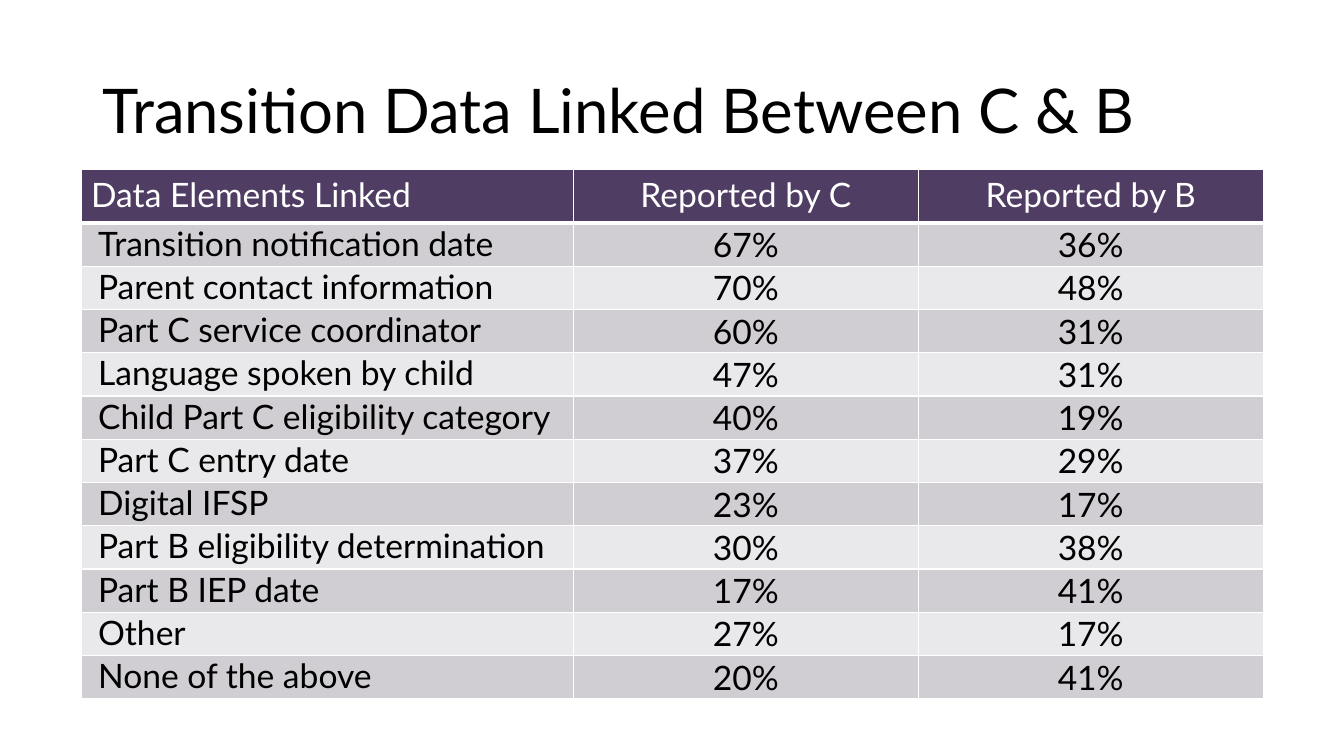
from dataclasses import dataclass

from lxml.etree import SubElement
from pptx import Presentation
from pptx.dml.color import RGBColor
from pptx.enum.text import MSO_ANCHOR as Anchor, PP_ALIGN as Align
from pptx.oxml.ns import qn
from pptx.util import Pt


@dataclass(frozen=True)
class Theme:
    font: str = "Lato"
    title_size: float = 44
    table_size: float = 24
    black: str = "000000"
    white: str = "FFFFFF"
    header: str = "4F3D63"
    bands: tuple = ("D0CED3", "E9E8EA")


THEME = Theme()
TITLE = "Transition Data Linked Between C & B"
HEADINGS = ("Data Elements Linked", "Reported by C", "Reported by B")
LINKED_DATA = (
    ("Transition notification date", "67%", "36%"),
    ("Parent contact information", "70%", "48%"),
    ("Part C service coordinator", "60%", "31%"),
    ("Language spoken by child", "47%", "31%"),
    ("Child Part C eligibility category", "40%", "19%"),
    ("Part C entry date", "37%", "29%"),
    ("Digital IFSP", "23%", "17%"),
    ("Part B eligibility determination", "30%", "38%"),
    ("Part B IEP date", "17%", "41%"),
    ("Other", "27%", "17%"),
    ("None of the above", "20%", "41%"),
)
COLUMN_WIDTHS = (351.6, 246.4, 246.4)
HEADER_HEIGHT, ROW_HEIGHT = 38.1, 30.9


def style_paragraph(paragraph, size, color, align):
    paragraph.alignment = align
    font = paragraph.font
    font.name, font.size, font.bold = THEME.font, Pt(size), False
    font.color.rgb = RGBColor.from_string(color)


def add_title(slide):
    title = slide.shapes.title
    title.left, title.top = Pt(66), Pt(28.75)
    title.width, title.height = Pt(828), Pt(104.4)
    frame = title.text_frame
    frame.text = TITLE
    frame.word_wrap = True
    frame.vertical_anchor = Anchor.MIDDLE
    paragraph = frame.paragraphs[0]
    paragraph.line_spacing = 0.9
    style_paragraph(paragraph, THEME.title_size, THEME.black, Align.LEFT)


def set_borders(cell, bottom_width):
    properties = cell._tc.get_or_add_tcPr()
    for side, width in (("L", 1), ("R", 1), ("T", 1), ("B", bottom_width)):
        line = SubElement(properties, qn(f"a:ln{side}"), w=str(Pt(width)))
        fill = SubElement(line, qn("a:solidFill"))
        SubElement(fill, qn("a:srgbClr"), val=THEME.white)


def fill_cell(cell, text, fill, color, align, bottom_width=1):
    cell.text = text
    set_borders(cell, bottom_width)
    cell.fill.solid()
    cell.fill.fore_color.rgb = RGBColor.from_string(fill)
    style_paragraph(cell.text_frame.paragraphs[0], THEME.table_size, color, align)


def fill_body_cell(cell, text, fill, is_label):
    align = Align.LEFT if is_label else Align.CENTER
    fill_cell(cell, text, fill, THEME.black, align)
    cell.margin_left = cell.margin_right = Pt(5)
    cell.margin_top = cell.margin_bottom = 0
    if is_label:
        properties = cell.text_frame.paragraphs[0]._p.get_or_add_pPr()
        properties.set("marL", str(Pt(7.2)))
    else:
        cell.vertical_anchor = Anchor.MIDDLE


def add_data_table(slide):
    height = HEADER_HEIGHT + ROW_HEIGHT * len(LINKED_DATA)
    table = slide.shapes.add_table(
        len(LINKED_DATA) + 1, len(HEADINGS),
        Pt(57.9), Pt(121.2), Pt(sum(COLUMN_WIDTHS)), Pt(height)).table
    for column, width in zip(table.columns, COLUMN_WIDTHS):
        column.width = Pt(width)
    for index, row in enumerate(table.rows):
        row.height = Pt(ROW_HEIGHT if index else HEADER_HEIGHT)

    # Header row
    for column, heading in enumerate(HEADINGS):
        align = Align.CENTER if column else Align.LEFT
        fill_cell(table.cell(0, column), heading, THEME.header, THEME.white, align, 3)

    # Banded data rows
    for index, values in enumerate(LINKED_DATA):
        band = THEME.bands[index % 2]
        for column, value in enumerate(values):
            fill_body_cell(table.cell(index + 1, column), value, band, column == 0)


def main():
    presentation = Presentation()
    presentation.slide_width, presentation.slide_height = Pt(960), Pt(540)
    slide = presentation.slides.add_slide(presentation.slide_layouts[5])
    add_title(slide)
    add_data_table(slide)
    presentation.save("out.pptx")


if __name__ == "__main__":
    main()
